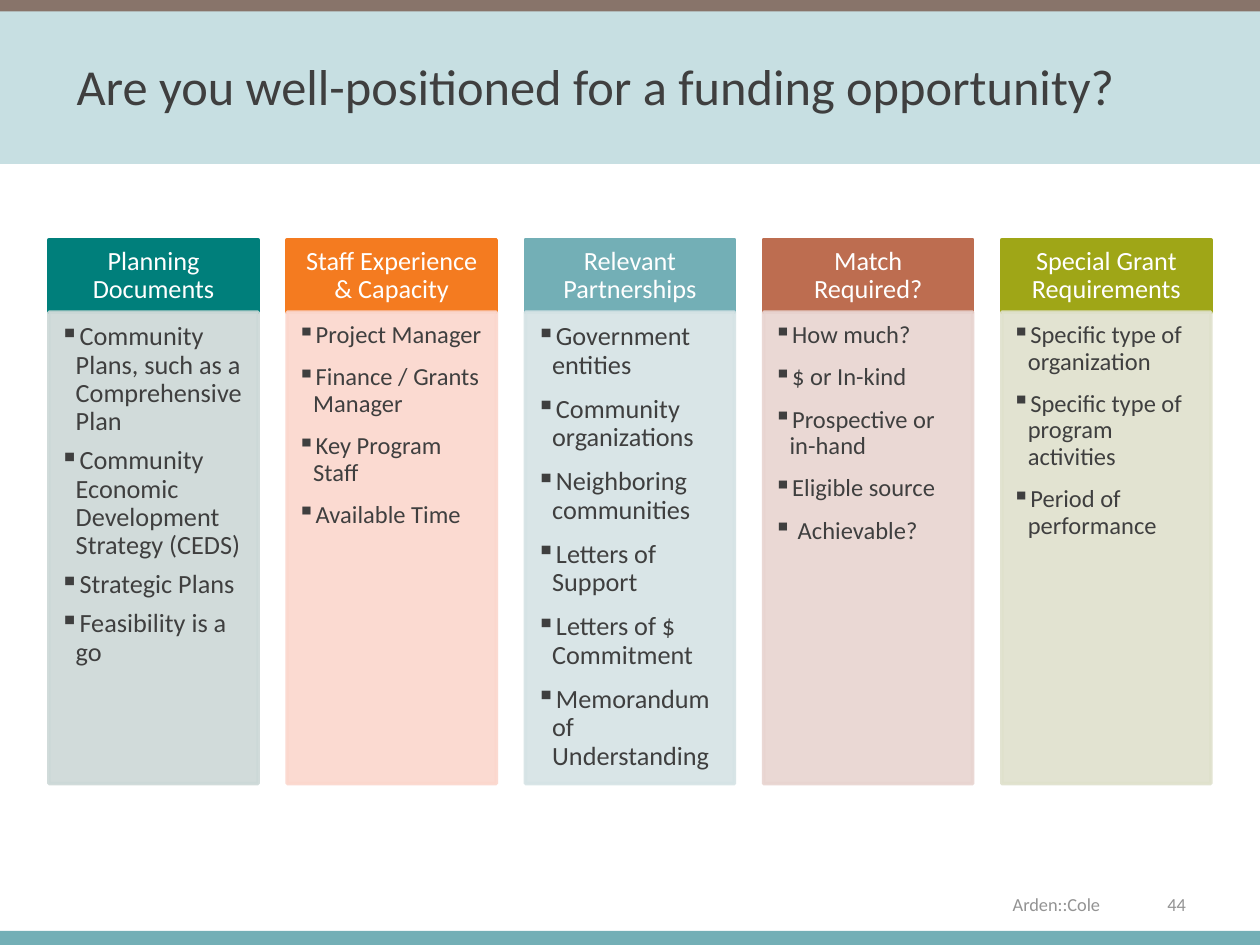
from lxml import etree
from pptx import Presentation
from pptx.dml.color import RGBColor
from pptx.enum.shapes import MSO_SHAPE
from pptx.enum.text import MSO_ANCHOR, PP_ALIGN
from pptx.oxml.ns import qn
from pptx.util import Pt

RECT = MSO_SHAPE.RECTANGLE
TOP, MIDDLE = MSO_ANCHOR.TOP, MSO_ANCHOR.MIDDLE
LEFT, CENTER, RIGHT = PP_ALIGN.LEFT, PP_ALIGN.CENTER, PP_ALIGN.RIGHT
FONT = "Calibri"
COLORS = {
    "brown": "88746A", "aqua": "73AFB6", "sky": "C7DFE2",
    "dark": "3F3F3F", "gray": "939393", "white": "FFFFFF",
    "teal": "007F7B", "teal_pale": "CCD8D7",
    "orange": "F47B20", "orange_pale": "FBD7CD",
    "aqua_pale": "D5E3E5",
    "rust": "BD6D50", "rust_pale": "E8D4D0",
    "olive": "9FA617", "olive_pale": "DFE1CC",
}
# color, heading, text size, space after, items
COLUMNS = [
    ("teal", "Planning Documents", 15, 6, [
        "Community Plans, such as a Comprehensive Plan",
        "Community Economic Development Strategy (CEDS)",
        "Strategic Plans", "Feasibility is a go"]),
    ("orange", "Staff Experience & Capacity", 14, 9, [
        "Project Manager", "Finance / Grants Manager",
        "Key Program Staff", "Available Time"]),
    ("aqua", "Relevant Partnerships", 15, 9, [
        "Government entities", "Community organizations",
        "Neighboring communities", "Letters of Support",
        "Letters of $ Commitment", "Memorandum of Understanding"]),
    ("rust", "Match Required?", 14, 9, [
        "How much?", "$ or In-kind", "Prospective or in-hand",
        "Eligible source", " Achievable?"]),
    ("olive", "Special Grant Requirements", 14, 9, [
        "Specific type of organization",
        "Specific type of program activities", "Period of performance"]),
]


def rgb(name):
    return RGBColor.from_string(COLORS[name])


def add_rect(slide, box, color, line=0, alpha=None):
    shape = slide.shapes.add_shape(RECT, *map(Pt, box))
    shape.shadow.inherit = False
    shape.fill.solid()
    shape.fill.fore_color.rgb = rgb(color)
    if line:
        shape.line.width = Pt(line)
        shape.line.color.rgb = rgb(color)
    else:
        shape.line.fill.background()
    if alpha:
        for tint in shape._element.spPr.iter(qn("a:srgbClr")):
            etree.SubElement(tint, qn("a:alpha"), val=str(alpha * 1000))
    return shape


def write(shape, lines, size, color, align=LEFT, anchor=MIDDLE,
          insets=(7.2, 3.6, 7.2, 3.6), spacing=1, after=0):
    frame = shape.text_frame
    frame.word_wrap = True
    frame.vertical_anchor = anchor
    (frame.margin_left, frame.margin_top,
     frame.margin_right, frame.margin_bottom) = map(Pt, insets)
    frame.text = "\n".join(lines)
    for para in frame.paragraphs:
        para.alignment = align
        para.line_spacing = spacing
        para.space_after = Pt(after)
        para.font.name = FONT
        para.font.size = Pt(size)
        para.font.color.rgb = rgb(color)
    return frame


def add_bullets(frame, indent):
    for para in frame.paragraphs:
        props = para._p.get_or_add_pPr()
        props.set("marL", str(Pt(indent)))
        props.set("indent", str(-Pt(indent)))
        bullet = etree.Element(qn("a:buChar"), char="▪")
        props.find(qn("a:defRPr")).addprevious(bullet)


def add_label(slide, box, text, size, color, **style):
    write(slide.shapes.add_textbox(*map(Pt, box)), [text], size, color, **style)


def add_header(slide, left, top, width, height):
    add_rect(slide, (left, top, width, 7.2), "brown")
    add_rect(slide, (left, top + 6.5, width, height - 6.5), "sky")
    add_label(slide, (left + 36.7, top + 21.6, 648, 54),
              "Are you well-positioned for a funding opportunity?", 28.8, "dark")


def add_footer(slide, left, top, width, height):
    add_rect(slide, (left, top + height - 8, width, 8), "aqua")
    add_label(slide, (left + 37.4, top, 610.6, 15), "Arden::Cole", 10.5, "gray",
              align=RIGHT, insets=(7.2, 0, 19.4, 0))
    add_label(slide, (left + 648, top, 36.7, 15), "44", 10.5, "gray",
              align=RIGHT, insets=(7.2, 0, 7.2, 0))


def add_column(slide, left, top, width, height, column):
    color, heading, size, after, items = column
    head = 41.4
    title = add_rect(slide, (left, top, width, head), color, line=2)
    write(title, [heading], 15, "white", align=CENTER,
          insets=(8.4, 4.8, 8.4, 4.8), spacing=0.9)
    body = add_rect(slide, (left, top + head, width, height - head),
                    color + "_pale", line=2, alpha=90)
    pad = size * 0.42
    frame = write(body, items, size, "dark", anchor=TOP,
                  insets=(pad, pad, pad * 4 / 3, pad * 1.5),
                  spacing=0.9, after=after)
    add_bullets(frame, 9)


def add_columns(slide, left, top, width, height, gap):
    count = len(COLUMNS)
    each = (width - gap * (count - 1)) / count
    for i, column in enumerate(COLUMNS):
        add_column(slide, left + i * (each + gap), top, each, height, column)


def main():
    deck = Presentation()
    deck.slide_width, deck.slide_height = Pt(720), Pt(540)
    slide = deck.slides.add_slide(deck.slide_layouts[6])
    add_header(slide, 0, 0, 720, 93.6)
    add_footer(slide, 0, 509, 720, 31)
    add_columns(slide, 28, 137, 664, 310.8, 16.6)
    deck.save("out.pptx")


if __name__ == "__main__":
    main()
